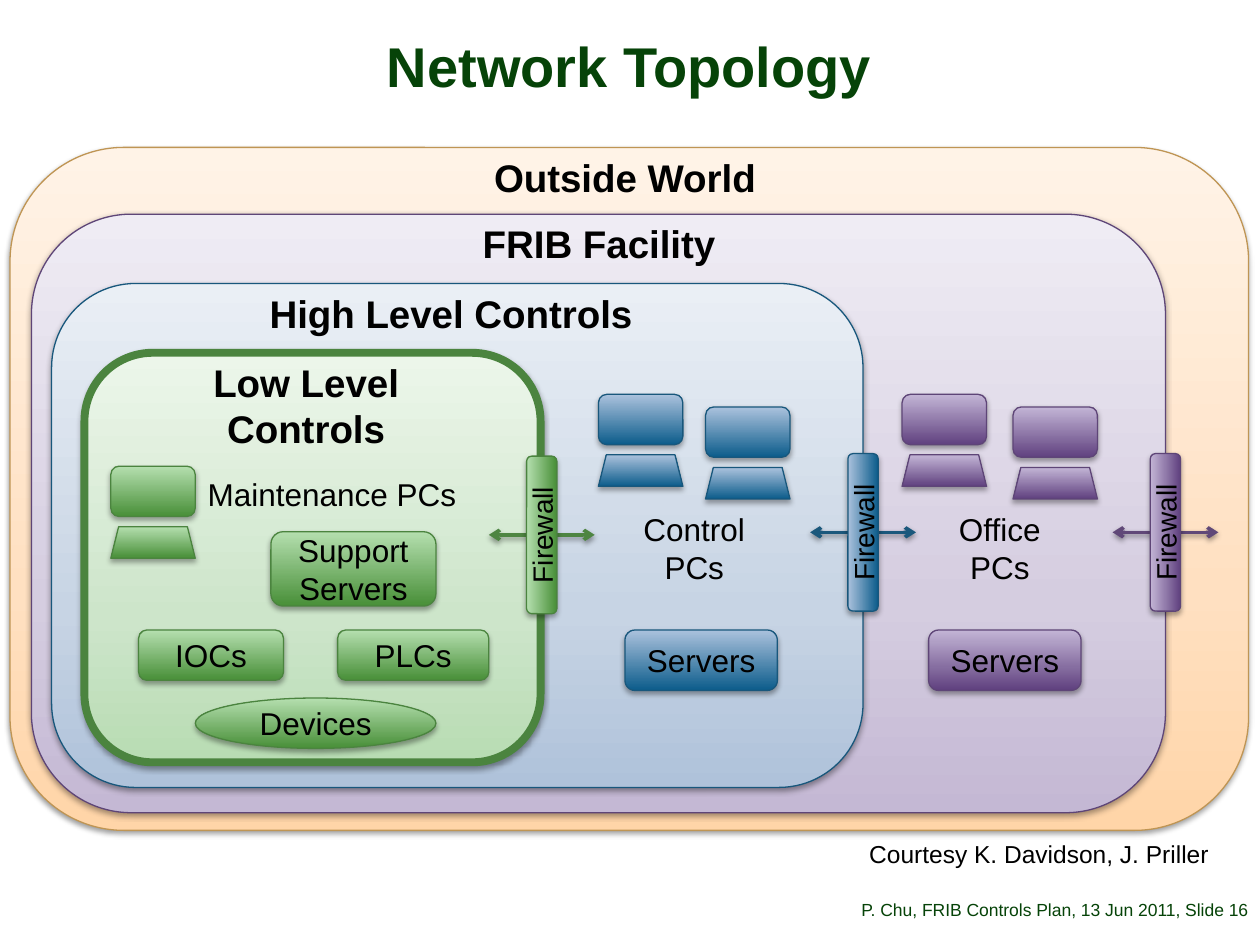
from dataclasses import dataclass

from lxml import etree
from pptx import Presentation
from pptx.dml.color import RGBColor
from pptx.enum.shapes import MSO_CONNECTOR, MSO_SHAPE
from pptx.enum.text import MSO_ANCHOR, PP_ALIGN
from pptx.oxml.ns import qn
from pptx.util import Inches, Pt

ROUNDED, TRAPEZOID, OVAL = (
    MSO_SHAPE.ROUNDED_RECTANGLE, MSO_SHAPE.TRAPEZOID, MSO_SHAPE.OVAL)
LEFT, CENTER, RIGHT = PP_ALIGN.LEFT, PP_ALIGN.CENTER, PP_ALIGN.RIGHT
TOP, MIDDLE, BOTTOM = MSO_ANCHOR.TOP, MSO_ANCHOR.MIDDLE, MSO_ANCHOR.BOTTOM
STRAIGHT = MSO_CONNECTOR.STRAIGHT


@dataclass(frozen=True)
class Palette:
    """Gradient stops run from bottom to top as (percent, colour)."""
    line: str
    zone: tuple
    item: tuple = ()
    arrow: str = ""


@dataclass(frozen=True)
class Theme:
    font: str = "Arial"
    text: str = "000000"
    accent: str = "064308"
    title: int = 32
    heading: int = 22
    label: int = 18
    firewall: int = 16
    credit: int = 14
    footer: int = 10
    orange: Palette = Palette(
        "BF9554", ((0, "FFD5A8"), (35, "FFE0C1"), (100, "FFF3E7")))
    purple: Palette = Palette(
        "5E4577", ((0, "C4B8D4"), (35, "D5CDE0"), (100, "EFECF4")),
        ((0, "60417F"), (100, "C3B5D6")), "604878")
    blue: Palette = Palette(
        "18577C", ((0, "AFC2DA"), (35, "C7D4E4"), (100, "EAEFF5")),
        ((0, "0C5C8B"), (100, "ABC2DD")), "1B587C")
    green: Palette = Palette(
        "4B843F", ((0, "B8DCB3"), (35, "CDE5CA"), (100, "ECF6EA")),
        ((0, "488F38"), (100, "B5DFAF")), "4E8542")


THEME = Theme()


@dataclass(frozen=True)
class Box:
    left: float
    top: float
    width: float
    height: float

    def inside(self, left, top, width, height):
        return Box(self.left + left, self.top + top, width, height)

    def lengths(self):
        return [Inches(v) for v in (self.left, self.top, self.width, self.height)]


def add_shadow(shape, opacity, distance):
    effects = etree.SubElement(shape._element.spPr, qn("a:effectLst"))
    shadow = etree.SubElement(
        effects, qn("a:outerShdw"), blurRad=str(Pt(3.1)),
        dist=str(Pt(distance)), dir="5400000", rotWithShape="0")
    color = etree.SubElement(shadow, qn("a:srgbClr"), val="000000")
    etree.SubElement(color, qn("a:alpha"), val=str(opacity * 1000))


def fill_gradient(shape, stops):
    shape.fill.gradient()
    shape.fill.gradient_angle = 90
    stop_list = shape._element.spPr.find(".//" + qn("a:gsLst"))
    for old_stop in list(stop_list):
        stop_list.remove(old_stop)
    for percent, color in stops:
        stop = etree.SubElement(stop_list, qn("a:gs"), pos=str(percent * 1000))
        etree.SubElement(stop, qn("a:srgbClr"), val=color)


def write(frame, text, size, color=THEME.text, bold=False, align=CENTER,
          anchor=MIDDLE, spacing=None, wrap=True):
    frame.word_wrap = wrap
    frame.vertical_anchor = anchor
    for index, line in enumerate(text.split("\n")):
        para = frame.add_paragraph() if index else frame.paragraphs[0]
        para.text = line
        para.alignment = align
        para.line_spacing = spacing
        para.font.name = THEME.font
        para.font.size = Pt(size)
        para.font.bold = bold
        para.font.color.rgb = RGBColor.from_string(color)


def add_text(shapes, box, text, size, margins=(0.1, 0.05, 0.1, 0.05), **style):
    frame = shapes.add_textbox(*box.lengths()).text_frame
    (frame.margin_left, frame.margin_top,
     frame.margin_right, frame.margin_bottom) = map(Inches, margins)
    write(frame, text, size, **{"anchor": TOP, **style})


def add_block(shapes, kind, box, stops, line, line_width=0.75, shadow=(35, 1.8)):
    block = shapes.add_shape(kind, *box.lengths())
    fill_gradient(block, stops)
    block.line.color.rgb = RGBColor.from_string(line)
    block.line.width = Pt(line_width)
    add_shadow(block, *shadow)
    return block


def add_item(shapes, box, palette, text="", kind=ROUNDED, size=THEME.label):
    item = add_block(shapes, kind, box, palette.item, palette.line)
    if text:
        write(item.text_frame, text, size)
    return item


def draw_zone(page, box, palette, heading, heading_left, heading_width,
              line_width=0.75):
    add_block(page.shapes, ROUNDED, box, palette.zone, palette.line,
              line_width, shadow=(38, 1.6))
    add_text(page.shapes, box.inside(heading_left, 0, heading_width, 0.47),
             heading, THEME.heading, bold=True)


def draw_computer(page, box, palette):
    """A screen above a keyboard, grouped."""
    shapes = page.shapes.add_group_shape().shapes
    add_item(shapes, box.inside(0, 0, box.width, 0.4), palette)
    add_item(shapes, box.inside(0, 0.48, box.width, 0.25), palette, kind=TRAPEZOID)


def draw_workplace(page, box, palette, caption):
    """Two computers, their caption and a server block."""
    draw_computer(page, box.inside(0, 0, 0.67, 0.73), palette)
    draw_computer(page, box.inside(box.width - 0.67, 0.1, 0.67, 0.73), palette)
    add_text(page.shapes, box.inside(0, 0.87, box.width, 0.71), caption, THEME.label)
    add_item(page.shapes, box.inside(0.21, 1.87, 1.21, 0.48), palette, "Servers")


def draw_low_level_devices(page, box, palette):
    shapes = page.shapes
    draw_computer(page, box.inside(0.21, 0.9, 0.67, 0.73), palette)
    add_text(shapes, box.inside(0.88, 0.92, 2.21, 0.4), "Maintenance PCs",
             THEME.label, align=LEFT)
    add_item(shapes, box.inside(1.48, 1.42, 1.31, 0.59), palette, "Support\nServers")
    add_item(shapes, box.inside(0.43, 2.2, 1.15, 0.4), palette, "IOCs")
    add_item(shapes, box.inside(2.01, 2.2, 1.2, 0.4), palette, "PLCs")
    add_item(shapes, box.inside(0.88, 2.74, 1.91, 0.4), palette, "Devices", OVAL)


def draw_firewall(page, box, palette):
    """An upright wall in the middle of the box, crossed by a two-way arrow."""
    shapes = page.shapes.add_group_shape().shapes
    middle_x, middle_y = box.left + box.width / 2, box.top + box.height / 2
    arrow = shapes.add_connector(
        STRAIGHT, Inches(box.left), Inches(middle_y),
        Inches(box.left + box.width), Inches(middle_y))
    arrow.line.color.rgb = RGBColor.from_string(palette.arrow)
    arrow.line.width = Pt(2)
    for end in ("a:headEnd", "a:tailEnd"):
        etree.SubElement(arrow.line._get_or_add_ln(), qn(end), type="arrow")
    add_shadow(arrow, 38, 1.6)
    length, thickness = box.height, 0.24
    wall_box = Box(middle_x - length / 2, middle_y - thickness / 2, length, thickness)
    wall = add_item(shapes, wall_box, palette, "Firewall", size=THEME.firewall)
    wall.rotation = 270


def draw_footer(page, box):
    style = {"color": THEME.accent, "anchor": BOTTOM, "spacing": 0.9}
    add_text(page.shapes, box.inside(0, 0, 3.17, box.height),
             "P. Chu, FRIB Controls Plan, 13 Jun 2011", THEME.footer,
             (0, 0.05, 0, 0.05), align=RIGHT, **style)
    add_text(page.shapes, box.inside(3.17, 0, 0.67, box.height),
             ", Slide 16", THEME.footer, (0, 0, 0, 0.05), align=LEFT, **style)


def main():
    deck = Presentation()
    deck.slide_width, deck.slide_height = Inches(10), Inches(7.5)
    page = deck.slides.add_slide(deck.slide_layouts[6])

    add_text(page.shapes, Box(0.08, 0, 9.83, 1.1), "Network Topology", THEME.title,
             (0.06, 0.02, 0.06, 0.02), color=THEME.accent, bold=True,
             anchor=MIDDLE, spacing=0.88)
    draw_footer(page, Box(6.16, 6.95, 3.84, 0.4))

    low_level = Box(0.67, 2.8, 3.62, 3.25)
    draw_zone(page, Box(0.08, 1.17, 9.83, 5.42), THEME.orange,
              "Outside World", 0.84, 8.08)
    draw_zone(page, Box(0.25, 1.7, 9, 4.75), THEME.purple,
              "FRIB Facility", 0.67, 7.67)
    draw_zone(page, Box(0.41, 2.25, 6.44, 4), THEME.blue,
              "High Level Controls", 0.59, 5.16)
    draw_zone(page, low_level, THEME.green, "Low Level Controls", 0.43, 2.66, 4.5)

    draw_low_level_devices(page, low_level, THEME.green)
    draw_workplace(page, Box(4.75, 3.13, 1.52, 2.35), THEME.blue, "Control\nPCs")
    draw_workplace(page, Box(7.16, 3.13, 1.55, 2.35), THEME.purple, "Office\nPCs")
    for left, top, palette in ((3.88, 3.62, THEME.green), (6.43, 3.6, THEME.blue),
                               (8.83, 3.6, THEME.purple)):
        draw_firewall(page, Box(left, top, 0.84, 1.25), palette)

    add_text(page.shapes, Box(6.8, 6.61, 2.91, 0.34), "Courtesy K. Davidson, J. Priller",
             THEME.credit, align=LEFT, wrap=False)
    deck.save("out.pptx")


if __name__ == "__main__":
    main()
